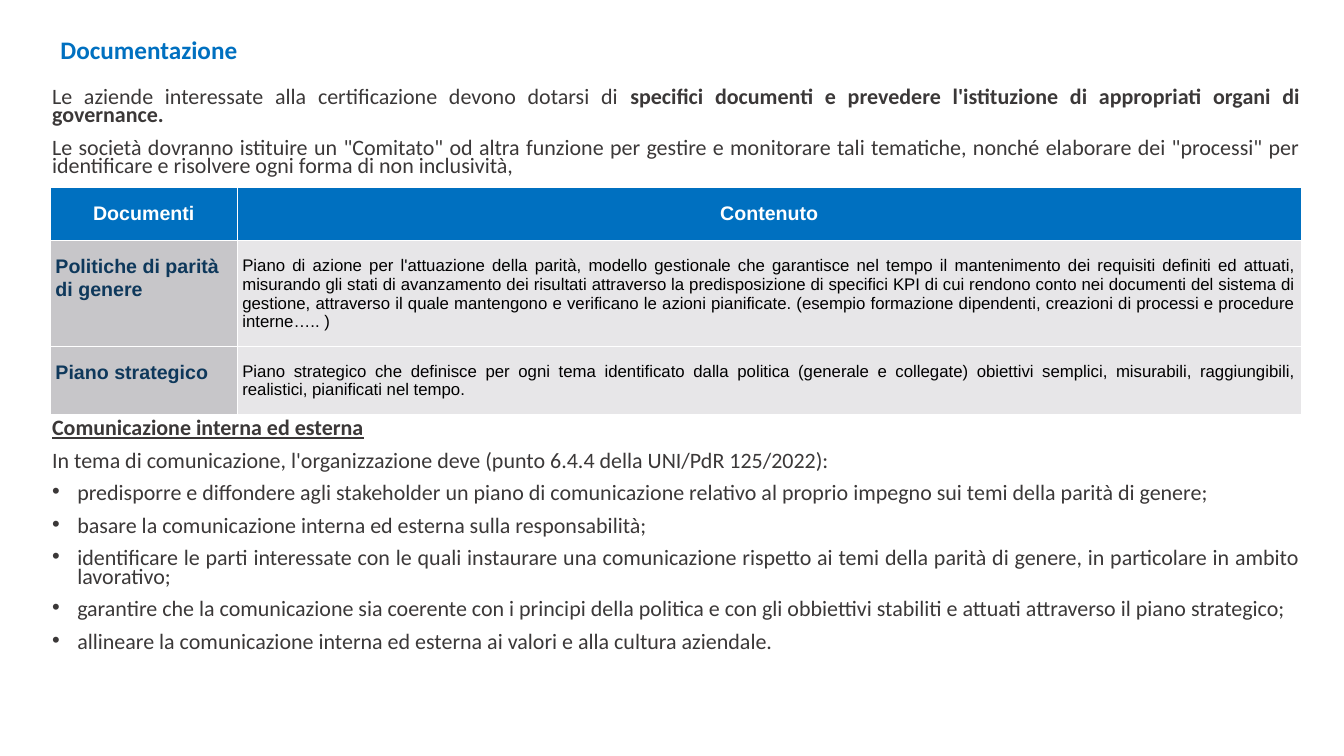
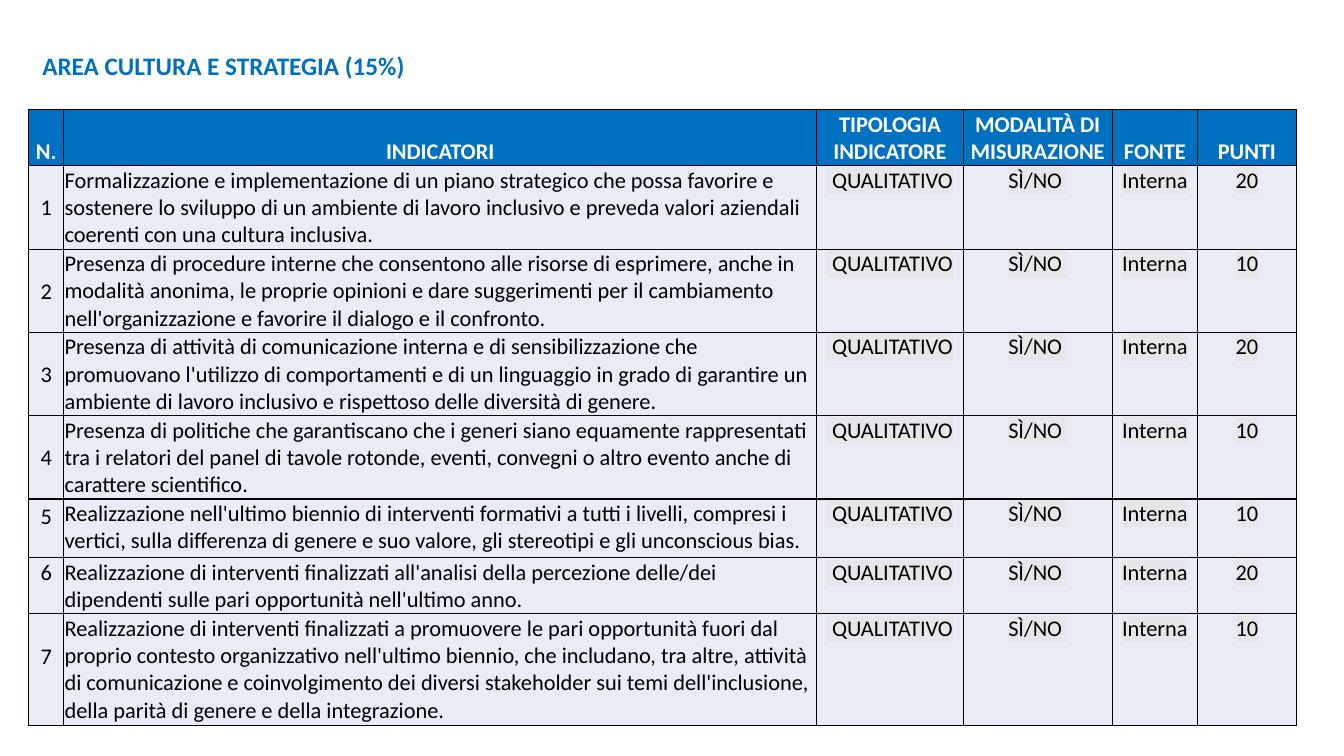
import pptx
import pptx.util
import pptx.dml.color
import pptx.enum.text
import pptx.oxml
import pptx.oxml.ns

Pt = pptx.util.Pt
Align = pptx.enum.text.PP_ALIGN
Anchor = pptx.enum.text.MSO_ANCHOR
NS = pptx.oxml.ns.nsdecls("a")

# Shared look
BLUE, WHITE, BLACK = "0070C0", "FFFFFF", "000000"
GREY, NAVY = "3B3838", "0E385B"
SILVER, PALE, LILAC = "C7C6C9", "E7E6E8", "E9EBF5"
MARK = "E7E6E8"
LINE = 19.5  # height of one table line on the indicator slide

# Text of the first slide
INTRO = [
    ("Le aziende interessate alla certificazione devono dotarsi di ",
     "specifici documenti e prevedere l'istituzione di appropriati organi di governance."),
    ("Le società dovranno istituire un \"Comitato\" od altra funzione per gestire e monitorare "
     "tali tematiche, nonché elaborare dei \"processi\" per identificare e risolvere ogni forma "
     "di non inclusività,", ""),
]
HEAD = "Comunicazione interna ed esterna"
LEAD = "In tema di comunicazione, l'organizzazione deve (punto 6.4.4 della UNI/PdR 125/2022):"
DUTIES = [
    "predisporre e diffondere agli stakeholder un piano di comunicazione relativo al proprio "
    "impegno sui temi della parità di genere;",
    "basare la comunicazione interna ed esterna sulla responsabilità;",
    "identificare le parti interessate con le quali instaurare una comunicazione rispetto ai "
    "temi della parità di genere, in particolare in ambito lavorativo;",
    "garantire che la comunicazione sia coerente con i principi della politica e con gli "
    "obbiettivi stabiliti e attuati attraverso il piano strategico;",
    "allineare la comunicazione interna ed esterna ai valori e alla cultura aziendale.",
]
PAPERS = [
    ("Politiche di parità di genere",
     "Piano di azione per l'attuazione della parità, modello gestionale che garantisce nel tempo "
     "il mantenimento dei requisiti definiti ed attuati, misurando gli stati di avanzamento dei "
     "risultati attraverso la predisposizione di specifici KPI di cui rendono conto nei documenti "
     "del sistema di gestione, attraverso il quale mantengono e verificano le azioni pianificate. "
     "(esempio formazione dipendenti, creazioni di processi e procedure interne….. )"),
    ("Piano strategico",
     "Piano strategico che definisce per ogni tema identificato dalla politica (generale e "
     "collegate) obiettivi semplici, misurabili, raggiungibili, realistici, pianificati nel tempo."),
]

# Text of the second slide: indicator and points
HEADS = ["N.", "INDICATORI", "TIPOLOGIA INDICATORE", "MODALITÀ DI MISURAZIONE", "FONTE", "PUNTI"]
ITEMS = [
    ("Formalizzazione e implementazione di un piano strategico che possa favorire e sostenere lo "
     "sviluppo di un ambiente di lavoro inclusivo e preveda valori aziendali coerenti con una "
     "cultura inclusiva.", 20),
    ("Presenza di procedure interne che consentono alle risorse di esprimere, anche in modalità "
     "anonima, le proprie opinioni e dare suggerimenti per il cambiamento nell'organizzazione e "
     "favorire il dialogo e il confronto.", 10),
    ("Presenza di attività di comunicazione interna e di sensibilizzazione che promuovano "
     "l'utilizzo di comportamenti e di un linguaggio in grado di garantire un ambiente di lavoro "
     "inclusivo e rispettoso delle diversità di genere.", 20),
    ("Presenza di politiche che garantiscano che i generi siano equamente rappresentati tra i "
     "relatori del panel di tavole rotonde, eventi, convegni o altro evento anche di carattere "
     "scientifico.", 10),
    ("Realizzazione nell'ultimo biennio di interventi formativi a tutti i livelli, compresi i "
     "vertici, sulla differenza di genere e suo valore, gli stereotipi e gli unconscious bias.", 10),
    ("Realizzazione di interventi finalizzati all'analisi della percezione delle/dei dipendenti "
     "sulle pari opportunità nell'ultimo anno.", 20),
    ("Realizzazione di interventi finalizzati a promuovere le pari opportunità fuori dal proprio "
     "contesto organizzativo nell'ultimo biennio, che includano, tra altre, attività di "
     "comunicazione e coinvolgimento dei diversi stakeholder sui temi dell'inclusione, della "
     "parità di genere e della integrazione.", 10),
]


def color(code):
    return pptx.dml.color.RGBColor.from_string(code)


def style(font, name, size, code, bold=False):
    font.name, font.size, font.bold = name, Pt(size), bold
    font.color.rgb = color(code)


def place(shape, left, top, width, height):
    shape.left, shape.top = Pt(left), Pt(top)
    shape.width, shape.height = Pt(width), Pt(height)


def title(slide, text, left, top):
    shape = slide.shapes.title
    place(shape, left, top, 828, 47.5)
    frame = shape.text_frame
    frame.text = text
    frame.vertical_anchor = Anchor.MIDDLE
    frame.auto_size = pptx.enum.text.MSO_AUTO_SIZE.NONE
    para = frame.paragraphs[0]
    para.alignment, para.line_spacing = Align.LEFT, 0.9
    style(para.font, "Calibri", 18, BLUE, True)


def bullet(para, on):
    props = para._p.get_or_add_pPr()
    props.set("marL", str(Pt(18 if on else 0)))
    props.set("indent", str(Pt(-18 if on else 0)))
    tags = ['<a:buFont %s typeface="Arial"/>', '<a:buChar %s char="•"/>'] if on else ["<a:buNone %s/>"]
    for tag in tags:
        props.append(pptx.oxml.parse_xml(tag % NS))


def add_para(frame, text, gap=10, dot=False, bold=False):
    first = frame.paragraphs[0]
    para = frame.add_paragraph() if first.runs else first
    para.add_run().text = text
    para.alignment, para.line_spacing = Align.JUSTIFY, 0.7
    para.space_before = Pt(gap)
    bullet(para, dot)
    style(para.font, "Calibri", 15.7, GREY, bold)
    return para


def add_grid(slide, left, top, cols, rows):
    frame = slide.shapes.add_table(len(rows), len(cols), Pt(left), Pt(top), Pt(sum(cols)), Pt(sum(rows)))
    table = frame.table
    table.first_row = table.horz_banding = False
    for col, width in zip(table.columns, cols):
        col.width = Pt(width)
    for row, height in zip(table.rows, rows):
        row.height = Pt(height)
    return table


def border(cell, code, width):
    props = cell._tc.get_or_add_tcPr()
    for side in "LRTB":
        props.append(pptx.oxml.parse_xml(
            f'<a:ln{side} {NS} w="{Pt(width)}"><a:solidFill><a:srgbClr val="{code}"/>'
            f"</a:solidFill></a:ln{side}>"))


def fill_cell(cell, text, back, align, inset, edge, anchor=Anchor.TOP):
    """Insets run left, top, right, bottom; returns the paragraph."""
    border(cell, *edge)
    cell.fill.solid()
    cell.fill.fore_color.rgb = color(back)
    cell.margin_left, cell.margin_top, cell.margin_right, cell.margin_bottom = map(Pt, inset)
    cell.vertical_anchor = anchor
    para = cell.text_frame.paragraphs[0]
    para.add_run().text = text
    para.alignment = align
    return para


def highlight(run):
    run._r.get_or_add_rPr().append(pptx.oxml.parse_xml(
        f'<a:highlight {NS}><a:srgbClr val="{MARK}"/></a:highlight>'))


def docs_slide(deck):
    slide = deck.slides.add_slide(deck.slide_layouts[1])
    title(slide, "Documentazione", 36, 13)

    # Body, with a gap that leaves room for the table
    body = slide.placeholders[1]
    place(body, 30, 60.5, 906, 460)
    frame = body.text_frame
    frame.auto_size = pptx.enum.text.MSO_AUTO_SIZE.NONE
    for row, (plain, strong) in enumerate(INTRO):
        para = add_para(frame, plain, 10 if row else 0)
        if strong:
            run = para.add_run()
            run.text, run.font.bold = strong, True
    add_para(frame, HEAD, 174, bold=True).font.underline = True
    add_para(frame, LEAD)
    for duty in DUTIES:
        add_para(frame, duty, dot=True)

    # Table of documents
    table = add_grid(slide, 36, 134, [133.5, 760], [38, 75.5, 48.5])
    inset, edge = (3.6, 11, 3.6, 10.5), (WHITE, 0.75)
    for col, text in enumerate(["Documenti", "Contenuto"]):
        para = fill_cell(table.cell(0, col), text, BLUE, Align.CENTER, inset, edge)
        style(para.font, "Arial", 14, WHITE, True)
    for row, (name, text) in enumerate(PAPERS, 1):
        para = fill_cell(table.cell(row, 0), name, SILVER, Align.LEFT, inset, edge)
        style(para.font, "Arial", 14, NAVY, True)
        para = fill_cell(table.cell(row, 1), text, PALE, Align.JUSTIFY, inset, edge)
        style(para.font, "Arial", 12, BLACK)


def score_slide(deck):
    slide = deck.slides.add_slide(deck.slide_layouts[5])
    title(slide, "AREA CULTURA E STRATEGIA (15%)", 23, 24)

    # Table of indicators
    table = add_grid(slide, 20.5, 78.5, [25, 538, 104.5, 106.5, 61, 70.5],
                     [40] + [59.5] * 4 + [42, 40, 79.5])
    inset, edge = (0.7, 0.7, 0.7, 0), (BLACK, 1)
    for col, text in enumerate(HEADS):
        para = fill_cell(table.cell(0, col), text, BLUE, Align.CENTER, inset, edge, Anchor.BOTTOM)
        style(para.font, "Calibri", 16, WHITE, True)
    for row, (text, points) in enumerate(ITEMS, 1):
        # Numbers sit one line above the foot, the last one two lines
        lift = (0.7, 0.7, 0.7, LINE * (2 if row == len(ITEMS) else 1))
        cells = [str(row), text, " QUALITATIVO", "SÌ/NO ", "Interna", str(points)]
        for col, words in enumerate(cells):
            para = fill_cell(table.cell(row, col), words, LILAC,
                             Align.LEFT if col == 1 else Align.CENTER,
                             inset if col else lift, edge,
                             Anchor.TOP if col else Anchor.BOTTOM)
            style(para.font, "Calibri", 16, BLACK)
            if col > 1:
                highlight(para.runs[0])


def main():
    deck = pptx.Presentation()
    deck.slide_width, deck.slide_height = Pt(960), Pt(540)
    docs_slide(deck)
    score_slide(deck)
    deck.save("out.pptx")


if __name__ == "__main__":
    main()
